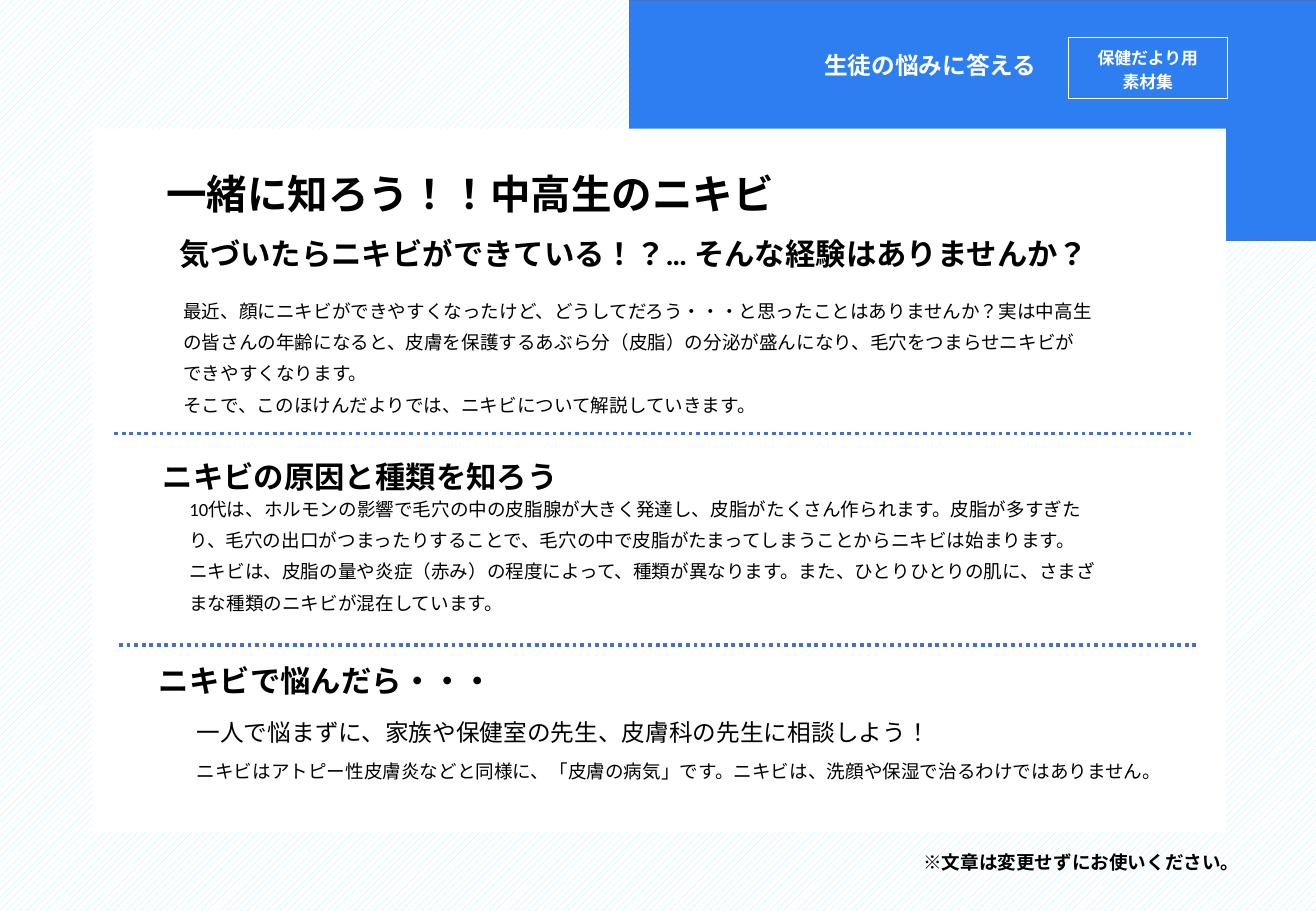
from lxml.etree import SubElement
from pptx import Presentation
from pptx.dml.color import RGBColor
from pptx.enum.dml import MSO_LINE, MSO_PATTERN
from pptx.enum.lang import MSO_LANGUAGE_ID
from pptx.enum.shapes import MSO_CONNECTOR, MSO_SHAPE
from pptx.enum.text import MSO_ANCHOR, MSO_AUTO_SIZE, PP_ALIGN
from pptx.oxml.ns import qn
from pptx.util import Inches, Pt

WIDE, HIGH = 10.83, 7.5
FONT = "Calibri"
INK = {"text": "000000", "white": "FFFFFF", "blue": "2D7EF1",
       "rule": "4472C4", "stripe": "BAE9FF"}
PAGE = (0, 0, WIDE, HIGH)
BAND = (5.18, 0, 5.65, 1.98)
CARD = (0.76, 1.06, 9.33, 5.79)


def hue(name):
    return RGBColor.from_string(INK[name])


def within(box, x, y, w, h):
    """Turn an offset and size inside box into a place on the slide."""
    return box[0] + x, box[1] + y, w, h


def panel(slide, box, fill=None, line=None, width=0.5):
    shape = slide.shapes.add_shape(MSO_SHAPE.RECTANGLE, *map(Inches, box))
    shape.shadow.inherit = False
    if fill:
        shape.fill.solid()
        shape.fill.fore_color.rgb = hue(fill)
    else:
        shape.fill.background()
    if line:
        shape.line.color.rgb = hue(line)
        shape.line.width = Pt(width)
    else:
        shape.line.fill.background()
    return shape


def write(shape, paras, size, bold=False, color="text", align=PP_ALIGN.LEFT,
          space=1.0, anchor=MSO_ANCHOR.TOP, wrap=True):
    """Fill a shape with paragraphs; a newline makes a line break."""
    frame = shape.text_frame
    frame.word_wrap = wrap
    frame.auto_size = MSO_AUTO_SIZE.SHAPE_TO_FIT_TEXT
    frame.vertical_anchor = anchor
    for i, text in enumerate(paras):
        para = frame.add_paragraph() if i else frame.paragraphs[0]
        para.alignment = align
        para.line_spacing = space
        for j, part in enumerate(text.split("\n")):
            if j:
                para.add_line_break()
            run = para.add_run()
            run.text = part
            font = run.font
            font.size, font.bold, font.name = Pt(size), bold, FONT
            font.color.rgb = hue(color)
            font.language_id = MSO_LANGUAGE_ID.JAPANESE
            SubElement(run._r.get_or_add_rPr(), qn("a:ea"), typeface=FONT)


def label(slide, box, text, size, **style):
    write(slide.shapes.add_textbox(*map(Inches, box)), [text], size, **style)


def body(slide, box, text):
    label(slide, box, text, 11, space=1.4, anchor=MSO_ANCHOR.MIDDLE)


def rule(slide, box, x, y):
    """Draw a dotted divider inside box."""
    left, top, width, _ = within(box, x, y, 8.89, 0)
    line = slide.shapes.add_connector(
        MSO_CONNECTOR.STRAIGHT, *map(Inches, (left, top, left + width, top)))
    line.line.color.rgb = hue("rule")
    line.line.width = Pt(2.25)
    line.line.dash_style = MSO_LINE.ROUND_DOT
    SubElement(line._element.spPr, qn("a:effectLst"))


def ground(slide):
    page = panel(slide, PAGE, "white")
    page.fill.patterned()
    page.fill.pattern = MSO_PATTERN.WIDE_UPWARD_DIAGONAL
    page.fill.fore_color.rgb = hue("stripe")
    page.fill.back_color.rgb = hue("white")
    panel(slide, BAND, "blue", "rule")
    panel(slide, CARD, "white")


def header(slide, box):
    label(slide, within(box, -0.19, 0.37, 3.64, 0.34), "生徒の悩みに答える", 14,
          bold=True, color="white", align=PP_ALIGN.RIGHT)
    badge = panel(slide, within(box, 3.61, 0.31, 1.31, 0.5),
                  line="white", width=0.75)
    write(badge, ["保健だより用", "素材集"], 10, bold=True, color="white",
          align=PP_ALIGN.CENTER, space=1.2)


def intro(slide, box):
    label(slide, within(box, 0.51, 0.28, 5.25, 0.5),
          "一緒に知ろう！！中高生のニキビ", 24, bold=True, wrap=False)
    label(slide, within(box, 0.62, 0.74, 8.59, 0.48),
          "気づいたらニキビができている！？… そんな経験はありませんか？",
          18, bold=True, space=1.3)
    body(slide, within(box, 0.65, 1.28, 7.69, 1.14),
         "最近、顔にニキビができやすくなったけど、どうしてだろう・・・と思ったことは"
         "ありませんか？実は中高生の皆さんの年齢になると、皮膚を保護するあぶら分"
         "（皮脂）の分泌が盛んになり、毛穴をつまらせニキビができやすくなります。\n"
         "そこで、このほけんだよりでは、ニキビについて解説していきます。")


def causes(slide, box):
    rule(slide, box, 0.18, 2.51)
    label(slide, within(box, 0.48, 2.57, 5.42, 0.48),
          "ニキビの原因と種類を知ろう", 18, bold=True, space=1.3)
    body(slide, within(box, 0.7, 2.91, 7.69, 1.14),
         "10代は、ホルモンの影響で毛穴の中の皮脂腺が大きく発達し、皮脂がたくさん"
         "作られます。皮脂が多すぎたり、毛穴の出口がつまったりすることで、毛穴の中で"
         "皮脂がたまってしまうことからニキビは始まります。\n"
         "ニキビは、皮脂の量や炎症（赤み）の程度によって、種類が異なります。また、"
         "ひとりひとりの肌に、さまざまな種類のニキビが混在しています。")


def advice(slide, box):
    rule(slide, box, 0.22, 4.25)
    label(slide, within(box, 0.45, 4.34, 2.98, 0.4),
          "ニキビで悩んだら・・・", 18, bold=True, wrap=False)
    label(slide, within(box, 0.76, 4.73, 8.91, 0.39),
          "一人で悩まずに、家族や保健室の先生、皮膚科の先生に相談しよう！",
          14, space=1.3)
    body(slide, within(box, 0.76, 5.08, 8.2, 0.34),
         "ニキビはアトピー性皮膚炎などと同様に、「皮膚の病気」です。"
         "ニキビは、洗顔や保湿で治るわけではありません。")


def footer(slide, box):
    label(slide, within(box, 7.37, 6.96, 2.78, 0.29),
          "※文章は変更せずにお使いください。", 11, bold=True,
          align=PP_ALIGN.RIGHT, wrap=False)


def main():
    deck = Presentation()
    deck.slide_width, deck.slide_height = Inches(WIDE), Inches(HIGH)
    slide = deck.slides.add_slide(deck.slide_layouts[6])
    ground(slide)
    header(slide, BAND)
    for part in (intro, causes, advice):
        part(slide, CARD)
    footer(slide, PAGE)
    deck.save("out.pptx")


if __name__ == "__main__":
    main()
